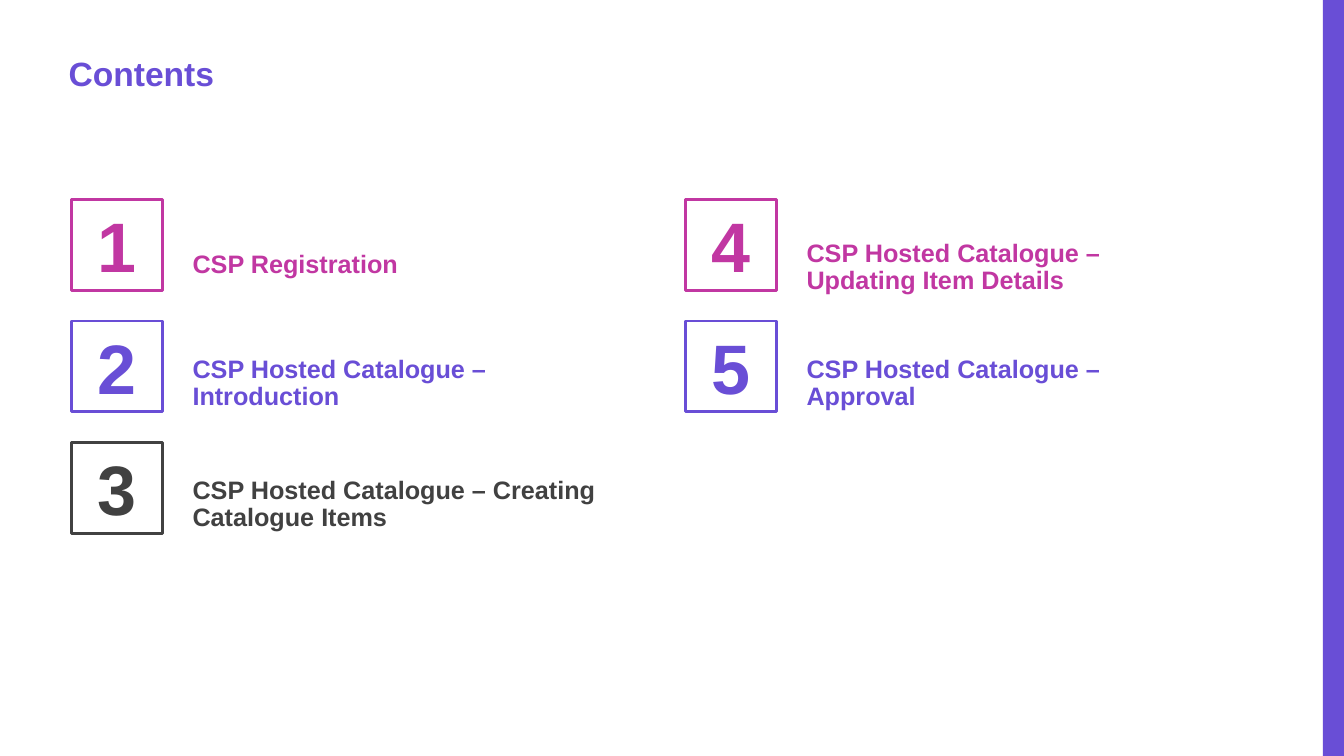
from pptx import Presentation
from pptx import util as u
from pptx.dml.color import RGBColor
from pptx.enum import shapes, text

PURPLE = RGBColor(0x69, 0x4E, 0xD6)
MAGENTA = RGBColor(0xC1, 0x37, 0xA2)
CHARCOAL = RGBColor(0x41, 0x41, 0x41)
ROW_COLOURS = [MAGENTA, PURPLE, CHARCOAL]

WIDTH, HEIGHT = 13.33, 7.5
GRID_LEFT, GRID_TOP = 0.71, 1.98
COLUMN_STEP, ROW_STEP = 6.09, 1.205
ROWS = len(ROW_COLOURS)
TILE = 0.9
LABEL_INDENT, LABEL_WIDTH = 1.2, 4

# Label, its top relative to the tile, and its height
ENTRIES = [
    ("CSP Registration", 0.04, 0.85),
    ("CSP Hosted Catalogue – Introduction", -0.13, 1.04),
    ("CSP Hosted Catalogue – Creating Catalogue Items", -0.13, 1.04),
    ("CSP Hosted Catalogue – Updating Item Details", -0.07, 0.85),
    ("CSP Hosted Catalogue – Approval", -0.13, 0.85),
]


def inches(*lengths):
    return [u.Inches(length) for length in lengths]


def write(frame, words, size, colour, align, spacing=1.0):
    frame.word_wrap = True
    frame.auto_size = text.MSO_AUTO_SIZE.NONE
    para = frame.paragraphs[0]
    para.alignment = align
    para.line_spacing = spacing
    para.space_before = u.Pt(0)
    span = para.add_run()
    span.text = words
    span.font.name = "Arial"
    span.font.size = u.Pt(size)
    span.font.bold = True
    span.font.color.rgb = colour


def set_insets(frame, top=0):
    frame.margin_left = frame.margin_right = frame.margin_bottom = 0
    frame.margin_top = u.Inches(top)


def add_side_bar(page, left, top, width, height):
    bar = page.shapes.add_shape(shapes.MSO_SHAPE.RECTANGLE,
                                *inches(left, top, width, height))
    bar.shadow.inherit = False
    bar.fill.solid()
    bar.fill.fore_color.rgb = PURPLE
    bar.line.fill.background()


def set_title(page, words, left, top, width, height):
    title = page.shapes.title
    title.left, title.top, title.width, title.height = inches(left, top, width, height)
    frame = title.text_frame
    set_insets(frame)
    frame.vertical_anchor = text.MSO_ANCHOR.BOTTOM
    write(frame, words, 24, PURPLE, text.PP_ALIGN.LEFT, 0.8)


def add_number_tile(page, number, colour, left, top):
    tile = page.shapes.add_shape(shapes.MSO_SHAPE.RECTANGLE,
                                 *inches(left, top, TILE, TILE))
    tile.shadow.inherit = False
    tile.fill.background()
    tile.line.color.rgb = colour
    tile.line.width = u.Pt(2)
    tile.text_frame.vertical_anchor = text.MSO_ANCHOR.MIDDLE
    write(tile.text_frame, str(number), 50, colour, text.PP_ALIGN.CENTER)


def add_label(page, words, colour, left, top, height):
    label = page.shapes.add_textbox(*inches(left, top, LABEL_WIDTH, height))
    set_insets(label.text_frame, top=0.48)
    write(label.text_frame, words, 18, colour, text.PP_ALIGN.LEFT, 0.9)


def add_contents(page, left, top):
    """Fill the numbered grid column by column."""
    for index, (words, shift, height) in enumerate(ENTRIES):
        column, row = divmod(index, ROWS)
        x = left + column * COLUMN_STEP
        y = top + row * ROW_STEP
        colour = ROW_COLOURS[row]
        add_number_tile(page, index + 1, colour, x, y)
        add_label(page, words, colour, x + LABEL_INDENT, y + shift, height)


def main():
    deck = Presentation()
    deck.slide_width, deck.slide_height = inches(WIDTH, HEIGHT)
    page = deck.slides.add_slide(deck.slide_layouts.get_by_name("Title Only"))
    add_side_bar(page, WIDTH - 0.21, 0, 0.21, HEIGHT)
    set_title(page, "Contents", 0.68, 0.19, 10.6, 0.73)
    add_contents(page, GRID_LEFT, GRID_TOP)
    deck.save("out.pptx")


if __name__ == "__main__":
    main()
